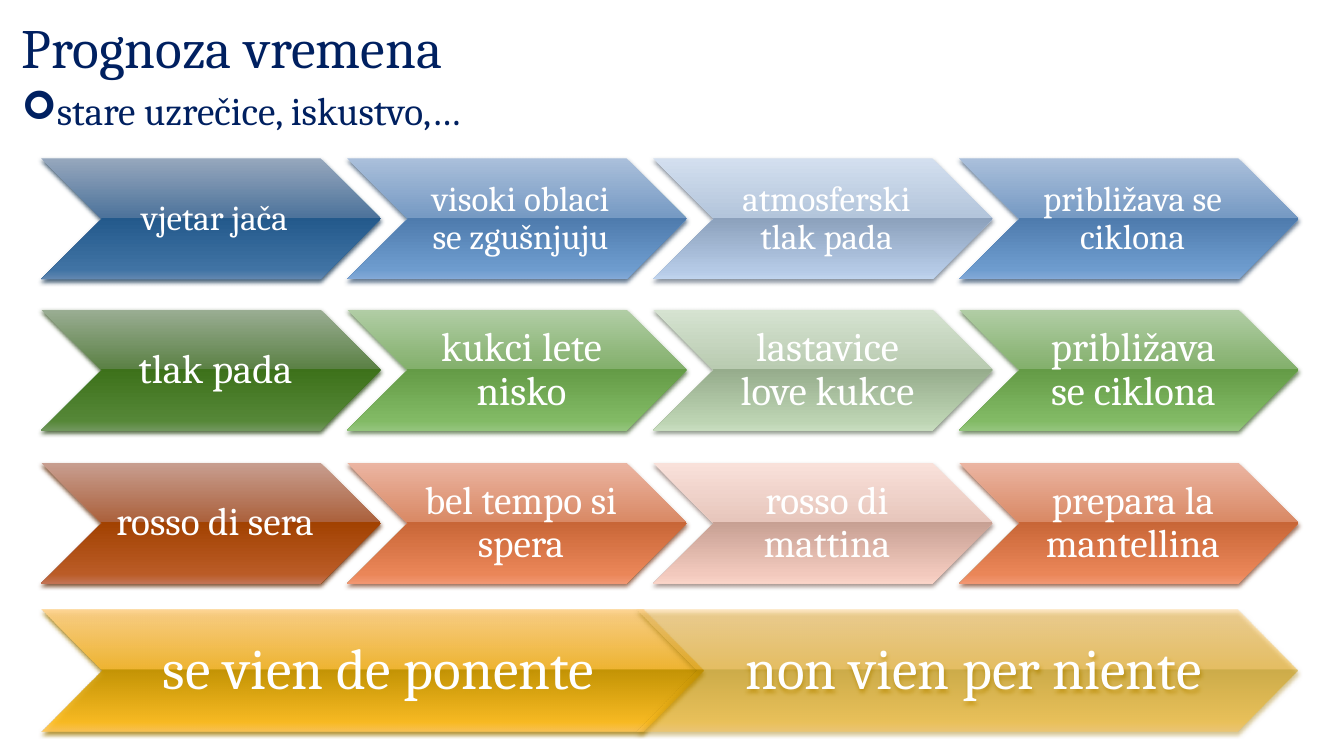
from pptx import Presentation
from pptx.dml.color import RGBColor
from pptx.enum.shapes import MSO_SHAPE
from pptx.enum.text import MSO_ANCHOR, MSO_AUTO_SIZE, PP_ALIGN
from pptx.oxml import parse_xml
from pptx.oxml.ns import nsdecls
from pptx.util import Cm, Pt

# Content
TITLE = "Prognoza vremena"
BULLET = "stare uzrečice, iskustvo,…"
FONT = "Cambria"
COLORS = {"text": "002060", "label": "FFFFFF"}
STOPS = (0, 49, 49, 92, 100)
# Five gradient colours, then the shadow colour
RAMPS = {
    "blue dark": "96A7BD 4D739B 23598B 4073A4 6388B1 2A4761",
    "blue mid": "AABFDB 769AC3 4E7BAD 6E9CCE 84AAD8 4B637E",
    "blue light": "D3DFEF B3C5DB 8CA1BC B4C9E5 C0D4EE 778290",
    "green dark": "9AAD93 5B8145 3D711A 558737 72985F 334F20",
    "green mid": "B1CDA5 83B06C 649B46 82BA65 94C57D 547144",
    "green light": "D6E3D1 B9CBB1 96AC8C BCD3B2 C8DDBF 7A8575",
    "orange dark": "C89E90 AB613C A24201 BA5B26 C37454 6C3916",
    "orange mid": "EBB5A2 D98965 C86637 EA8658 F29772 8D583F",
    "orange light": "F9E1DA E7C6BC C7A093 F2C9BD FAD4C8 99847D",
    "gold": "FFD38E F5B831 C59400 FFBE21 FFC659 9D7700",
}
SHADES = [(" dark", 100), (" mid", 100), (" light", 100), (" mid", 100)]
GOLD_SHADES = [("", 90), ("", 50)]
# Lengths in cm: top, left, width, pitch, left inset, other insets
ROWS = [
    ("blue", SHADES, 25, (3.99, 1.04, 8.56, 7.71, 0.28, 0.1),
     ["vjetar jača", "visoki oblaci se zgušnjuju",
      "atmosferski tlak pada", "približava se ciklona"]),
    ("green", SHADES, 29, (7.8, 1.04, 8.56, 7.71, 0.33, 0.1),
     ["tlak pada", "kukci lete nisko",
      "lastavice love kukce", "približava se ciklona"]),
    ("orange", SHADES, 28, (11.66, 1.04, 8.56, 7.71, 0.3, 0.1),
     ["rosso di sera", "bel tempo si spera",
      "rosso di mattina", "prepara la mantellina"]),
    ("gold", GOLD_SHADES, 41, (15.37, 1.06, 16.66, 14.99, 0.46, 0.15),
     ["se vien de ponente", "non vien per niente"]),
]
HEIGHT = 3.05


def write(tf, text, size, color, align):
    tf.text = text
    tf.word_wrap = True
    tf.auto_size = MSO_AUTO_SIZE.NONE
    p = tf.paragraphs[0]
    p.alignment = align
    p.line_spacing = 0.9
    p.space_before = Pt(0)
    font = p.runs[0].font
    font.name = FONT
    font.size = Pt(size)
    font.color.rgb = RGBColor.from_string(COLORS[color])
    return p


def place(sp, left, top, width, height):
    sp.left, sp.top, sp.width, sp.height = map(Cm, (left, top, width, height))


def add_gloss(sp, ramp, alpha):
    *tones, shade = RAMPS[ramp].split()
    stops = "".join(
        f'<a:gs pos="{pos * 1000}"><a:srgbClr val="{tone}">'
        f'<a:alpha val="{alpha * 1000}"/></a:srgbClr></a:gs>'
        for pos, tone in zip(STOPS, tones))
    sp.line.fill.background()
    spPr = sp._element.spPr
    spPr.insert(2, parse_xml(
        f'<a:gradFill {nsdecls("a")} rotWithShape="1"><a:gsLst>{stops}</a:gsLst>'
        '<a:lin ang="5400000" scaled="0"/></a:gradFill>'))
    spPr.append(parse_xml(
        f'<a:effectLst {nsdecls("a")}><a:outerShdw blurRad="{Pt(3.1)}" '
        f'dist="{Pt(2)}" dir="5400000" rotWithShape="0">'
        f'<a:srgbClr val="{shade}"><a:alpha val="83000"/></a:srgbClr>'
        '</a:outerShdw></a:effectLst>'))


prs = Presentation()
prs.slide_width, prs.slide_height = Cm(33.87), Cm(19.05)
s = prs.slides.add_slide(prs.slide_layouts[1])

# Title
title = s.shapes.title
place(title, 0.3, 0.38, 33.12, 1.8)
write(title.text_frame, TITLE, 39.6, "text", PP_ALIGN.LEFT)
title.text_frame.vertical_anchor = MSO_ANCHOR.MIDDLE

# Bullet line
body = s.placeholders[1]
place(body, 0.3, 2.18, 17.3, 2.54)
p = write(body.text_frame, BULLET, 28, "text", PP_ALIGN.LEFT)
pPr = p._p.get_or_add_pPr()
pPr.set("marL", str(Cm(0.64)))
pPr.set("indent", str(-Cm(0.64)))
pPr.append(parse_xml(f'<a:buFont {nsdecls("a")} typeface="Wingdings"/>'))
pPr.append(parse_xml(f'<a:buChar {nsdecls("a")} char="➢"/>'))

# Chevron rows
for hue, shades, size, (top, left, width, pitch, inset, margin), labels in ROWS:
    for i, (label, (shade, alpha)) in enumerate(zip(labels, shades)):
        sp = s.shapes.add_shape(MSO_SHAPE.CHEVRON, Cm(left + i * pitch),
                                Cm(top), Cm(width), Cm(HEIGHT))
        add_gloss(sp, hue + shade, alpha)
        tf = sp.text_frame
        write(tf, label, size, "label", PP_ALIGN.CENTER)
        tf.vertical_anchor = MSO_ANCHOR.MIDDLE
        tf.margin_left = Cm(inset)
        tf.margin_top = tf.margin_right = tf.margin_bottom = Cm(margin)

prs.save("out.pptx")
